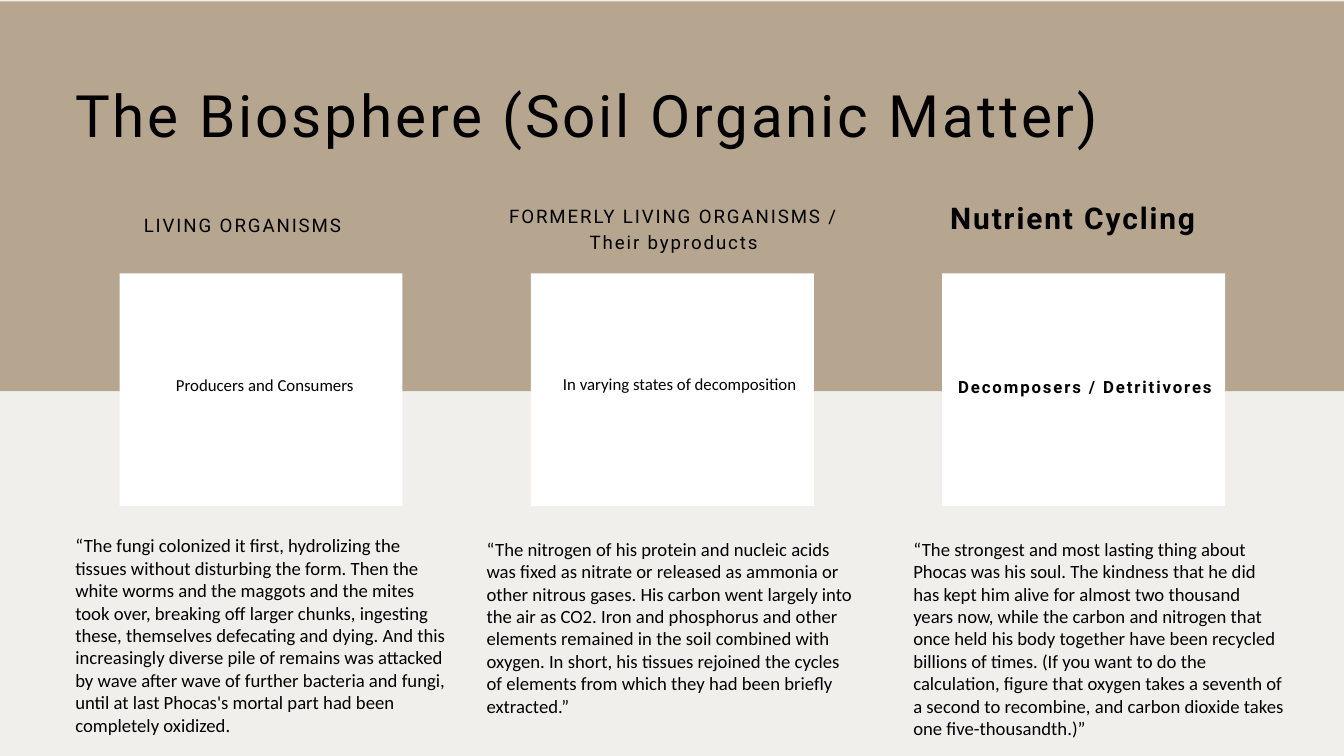
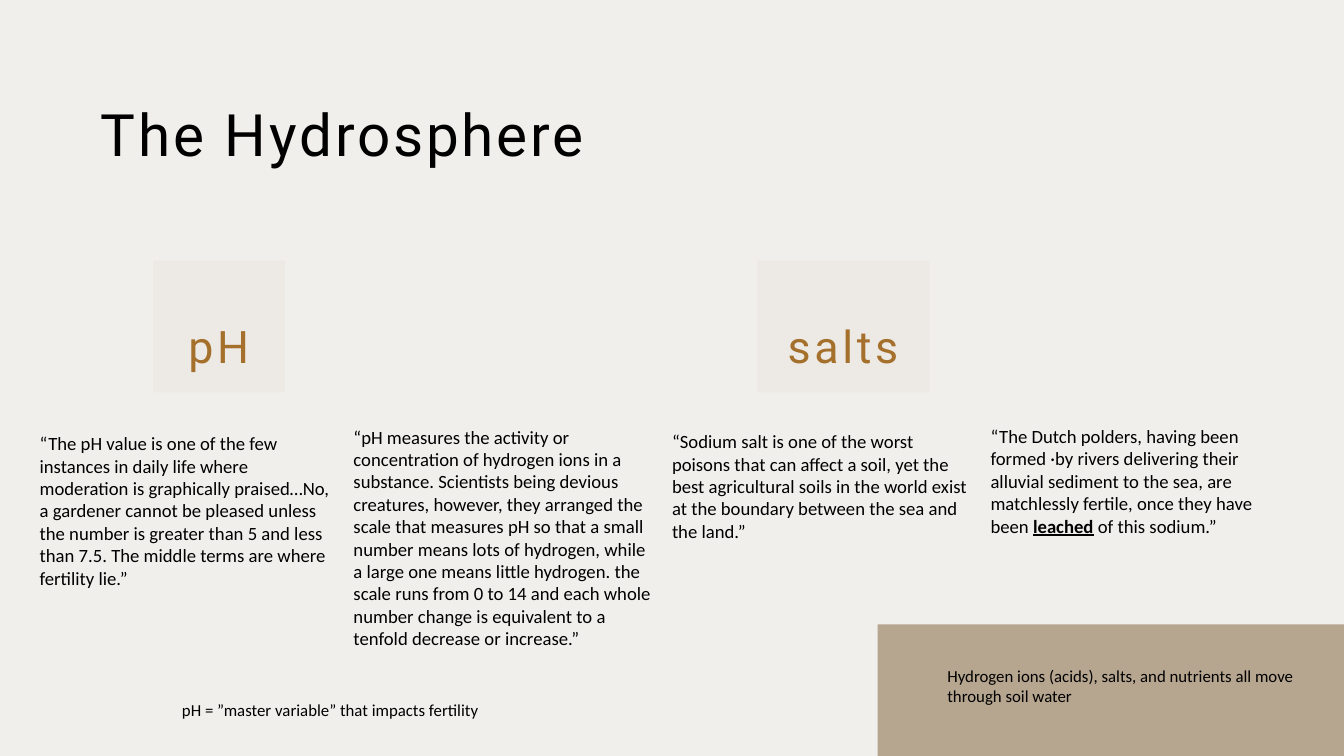
from pptx import Presentation
from pptx.dml.color import RGBColor
from pptx.enum import shapes, text
from pptx.util import Inches, Pt

PAPER = RGBColor(0xF1, 0xEF, 0xEC)
TAN = RGBColor(0xB6, 0xA5, 0x8F)
TILE = RGBColor(0xED, 0xEA, 0xE6)
WHITE = RGBColor(0xFF, 0xFF, 0xFF)
BLACK = RGBColor(0, 0, 0)
BROWN = RGBColor(0xA4, 0x70, 0x2B)
BODY = "Calibri"
HEAD = "Roboto"
CENTER = text.PP_ALIGN.CENTER


def add_page(deck):
    page = deck.slides.add_slide(deck.slide_layouts[6])
    page.background.fill.solid()
    page.background.fill.fore_color.rgb = PAPER
    return page


def add_block(page, left, top, width, height, color):
    block = page.shapes.add_shape(
        shapes.MSO_SHAPE.RECTANGLE,
        Inches(left), Inches(top), Inches(width), Inches(height))
    block.shadow.inherit = False
    block.fill.solid()
    block.fill.fore_color.rgb = color
    block.line.fill.background()


def add_run(para, words, size, font, color=BLACK, bold=False, line=False, gap=0):
    run = para.add_run()
    run.text = words
    run.font.size = Pt(size)
    run.font.name = font
    run.font.color.rgb = color
    run.font.bold = bold
    run.font.underline = line
    if gap:
        run._r.get_or_add_rPr().set("spc", str(round(gap * 100)))


def add_box(page, left, top, width, height, inset=False, wrap=True,
            lead=None, align=None):
    box = page.shapes.add_textbox(
        Inches(left), Inches(top), Inches(width), Inches(height))
    frame = box.text_frame
    frame.word_wrap = wrap
    frame.auto_size = text.MSO_AUTO_SIZE.SHAPE_TO_FIT_TEXT
    if not inset:
        frame.margin_left = frame.margin_right = 0
        frame.margin_top = frame.margin_bottom = 0
    para = frame.paragraphs[0]
    if lead:
        para.line_spacing = Pt(lead)
    if align is not None:
        para.alignment = align
    return para


def add_title(page, left, top, width, words):
    para = add_box(page, left, top, width, 1.15, lead=87.6)
    add_run(para, words, 62.6, HEAD, gap=3.1)


def add_quote(page, left, top, width, height, *parts):
    para = add_box(page, left, top, width, height)
    for place, words in enumerate(parts):
        key = place % 2 == 1
        add_run(para, words, 20, BODY, bold=key, line=key)


def add_head(page, left, top, height, words, size=20, bold=False, align=None):
    para = add_box(page, left, top, 5.05, height, lead=28, align=align)
    add_run(para, words, size, HEAD, bold=bold, gap=2)


def add_note(page, left, top, width, words, height=0.4, wrap=False,
             font=BODY, bold=False, gap=0):
    para = add_box(page, left, top, width, height, inset=True, wrap=wrap)
    add_run(para, words, 18, font, bold=bold, gap=gap)


def add_term(page, left, width, words):
    add_block(page, left, 3.88, width, 1.96, TILE)
    inner = width - 0.43
    para = add_box(page, left + 0.21, 4.02, inner, 1.31, lead=110.1, align=CENTER)
    add_run(para, words, 48, HEAD, BROWN, gap=3.9)


def draw_life(deck):
    page = add_page(deck)
    add_block(page, 0, 0.02, 20, 5.8, TAN)
    for col in range(3):
        add_block(page, 1.78 + col * 6.12, 4.07, 4.21, 3.46, WHITE)
    add_title(page, 1.12, 1.01, 17.99, "The Biosphere (Soil Organic Matter)")

    add_head(page, 2.14, 3.12, 0.36, "LIVING ORGANISMS")
    add_head(page, 7.5, 2.99, 0.75,
             "FORMERLY LIVING ORGANISMS / Their byproducts", align=CENTER)
    add_head(page, 14.14, 3.12, 0.4, "Nutrient Cycling", size=32, bold=True)

    add_note(page, 2.52, 5.52, 2.87, "Producers and Consumers")
    add_note(page, 8.28, 5.51, 3.77, "In varying states of decomposition")
    add_note(page, 14.16, 5.56, 4.14, "Decomposers / Detritivores",
             font=HEAD, bold=True, gap=2)

    quotes = [
        (1.12, 7.95, 3.03,
         "“The fungi colonized it first, hydrolizing the tissues without "
         "disturbing the form. Then the white worms and the maggots and the "
         "mites took over, breaking off larger chunks, ingesting these, "
         "themselves defecating and dying. And this increasingly diverse pile "
         "of remains was attacked by wave after wave of further bacteria and "
         "fungi, until at last Phocas's mortal part had been completely "
         "oxidized."),
        (7.24, 8, 2.69,
         "“The nitrogen of his protein and nucleic acids was fixed as nitrate "
         "or released as ammonia or other nitrous gases. His carbon went "
         "largely into the air as CO2. Iron and phosphorus and other elements "
         "remained in the soil combined with oxygen. In short, his tissues "
         "rejoined the cycles of elements from which they had been briefly "
         "extracted.”"),
        (13.59, 8, 3.03,
         "“The strongest and most lasting thing about Phocas was his soul. The "
         "kindness that he did has kept him alive for almost two thousand "
         "years now, while the carbon and nitrogen that once held his body "
         "together have been recycled billions of times. (If you want to do "
         "the calculation, figure that oxygen takes a seventh of a second to "
         "recombine, and carbon dioxide takes one five-thousandth.)”"),
    ]
    for left, top, height, words in quotes:
        add_quote(page, left, top, 5.52, height, words)


def draw_water(deck):
    page = add_page(deck)
    add_block(page, 13.06, 9.29, 6.94, 1.96, TAN)
    add_title(page, 1.5, 1.29, 8.79, "The Hydrosphere")
    add_term(page, 2.28, 1.96, "pH")
    add_term(page, 11.27, 2.56, "salts")

    quotes = [
        (0.59, 6.43, 2.36,
         ["“The pH value is one of the few instances in daily life where "
          "moderation is graphically praised…No, a gardener cannot be pleased "
          "unless the number is greater than 5 and less than 7.5. The middle "
          "terms are where fertility lie.”"]),
        (5.26, 6.33, 3.37,
         ["“pH measures the activity or concentration of hydrogen ions in a "
          "substance. Scientists being devious creatures, however, they "
          "arranged the scale that measures pH so that a small number means "
          "lots of hydrogen, while a large one means little hydrogen. the "
          "scale runs from 0 to 14 and each whole number change is equivalent "
          "to a tenfold decrease or increase.”"]),
        (10, 6.4, 1.68,
         ["“Sodium salt is one of the worst poisons that can affect a soil, "
          "yet the best agricultural soils in the world exist at the boundary "
          "between the sea and the land.”"]),
        (14.74, 6.32, 1.68,
         ["“The Dutch polders, having been formed ·by rivers delivering their "
          "alluvial sediment to the sea, are matchlessly fertile, once they "
          "have been ", "leached", " of this sodium.”"]),
    ]
    for left, top, height, parts in quotes:
        add_quote(page, left, top, 4.49, height, *parts)

    add_note(page, 2.61, 10.37, 4.84,
             "pH = ”master variable” that impacts fertility")
    add_note(page, 14, 9.86, 5.36,
             "Hydrogen ions (acids), salts, and nutrients all move through "
             "soil water", height=0.71, wrap=True)


def main():
    deck = Presentation()
    deck.slide_width = Inches(20)
    deck.slide_height = Inches(11.25)
    draw_life(deck)
    draw_water(deck)
    deck.save("out.pptx")


if __name__ == "__main__":
    main()
